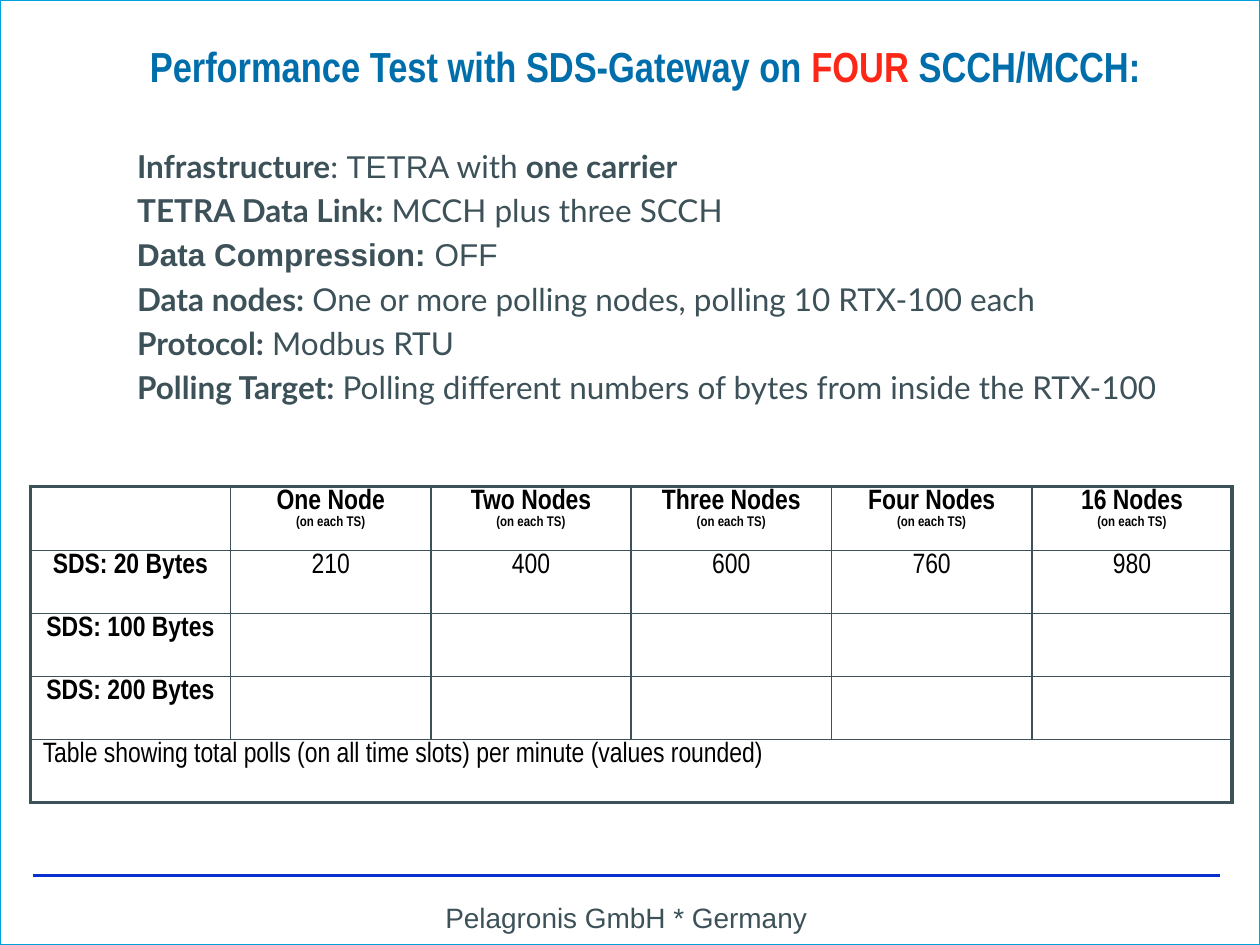
import pptx
import pptx.dml.color
import pptx.enum.shapes
import pptx.enum.text
import pptx.oxml.ns
import pptx.util
from lxml import etree
from pptx.dml.color import RGBColor
from pptx.util import Inches

BLUE = RGBColor(0x00, 0x6E, 0xAA)
RED = RGBColor(0xFD, 0x27, 0x17)
SLATE = RGBColor(0x3D, 0x51, 0x59)
FRAME = RGBColor(0x00, 0xA0, 0xDD)
RULE = RGBColor(0x0A, 0x30, 0xD0)
BLACK = RGBColor(0, 0, 0)
WHITE = RGBColor(255, 255, 255)
CENTER = pptx.enum.text.PP_ALIGN.CENTER
LEFT = pptx.enum.text.PP_ALIGN.LEFT
qn = pptx.oxml.ns.qn


def add_text(para, text, font="Arial", size=18, color=SLATE, bold=False):
    span = para.add_run()
    span.text = text
    span.font.name = font
    span.font.size = pptx.util.Pt(size)
    span.font.color.rgb = color
    span.font.bold = bold


def set_border(cell, side, width):
    line = etree.SubElement(cell._tc.get_or_add_tcPr(), qn("a:ln" + side),
                            w=str(pptx.util.Pt(width)))
    fill = etree.SubElement(line, qn("a:solidFill"))
    etree.SubElement(fill, qn("a:srgbClr"), val=str(SLATE))


deck = pptx.Presentation()
deck.slide_width, deck.slide_height = Inches(10), Inches(7.5)
page = deck.slides.add_slide(deck.slide_layouts[6])

# Page frame
frame = page.shapes.add_shape(pptx.enum.shapes.MSO_SHAPE.RECTANGLE,
                              0, 0, deck.slide_width, deck.slide_height)
frame.shadow.inherit = False
frame.fill.background()
frame.line.color.rgb = FRAME
frame.line.width = pptx.util.Pt(0.75)

# Footer rule
rule = page.shapes.add_connector(pptx.enum.shapes.MSO_CONNECTOR.STRAIGHT,
                                 Inches(0.26), Inches(6.95), Inches(9.68), Inches(6.95))
rule.line.color.rgb = RULE
rule.line.width = pptx.util.Pt(1.5)
etree.SubElement(rule._element.spPr, qn("a:effectLst"))

# Text boxes: footer, title and test conditions
frames = []
for left, top, width, height, inset_x, inset_y in [
    (0.26, 7.15, 9.42, 0.27, 0, 0),
    (1.14, 0.12, 7.96, 0.6, 0, 0),
    (0.99, 1.12, 8.49, 2.4, 0.1, 0.05),
]:
    box = page.shapes.add_textbox(Inches(left), Inches(top), Inches(width), Inches(height))
    text_frame = box.text_frame
    text_frame.word_wrap = True
    text_frame.margin_left = text_frame.margin_right = Inches(inset_x)
    text_frame.margin_top = text_frame.margin_bottom = Inches(inset_y)
    frames.append(text_frame)
footer, title, conditions = frames

footer.paragraphs[0].alignment = CENTER
add_text(footer.paragraphs[0], "Pelagronis GmbH * Germany", size=16)

title.vertical_anchor = pptx.enum.text.MSO_ANCHOR.BOTTOM
title.paragraphs[0].alignment = CENTER
for text, color in [("Performance Test with SDS-Gateway on ", BLUE),
                    ("FOUR", RED), (" SCCH/MCCH:", BLUE)]:
    add_text(title.paragraphs[0], text, font="Arial Narrow", size=24, color=color, bold=True)

# Each line holds spans of text, font and bold
condition_lines = [
    [("Infrastructure", "Lato", True), (": ", "Lato", False), ("TETRA ", "Arial", False),
     ("with ", "Lato", False), ("one carrier", "Lato", True)],
    [("TETRA Data Link:", "Lato", True), (" MCCH plus three SCCH", "Lato", False)],
    [("Data Compression:", "Arial", True), (" OFF", "Arial", False)],
    [("Data nodes:", "Lato", True),
     (" One or more polling nodes, polling 10 RTX-100 each", "Lato", False)],
    [("Protocol:", "Lato", True), (" Modbus RTU", "Lato", False)],
    [("Polling Target:", "Lato", True),
     (" Polling different numbers of bytes from inside the RTX-100", "Lato", False)],
]
for index, spans in enumerate(condition_lines):
    para = conditions.paragraphs[0] if index == 0 else conditions.add_paragraph()
    properties = para._p.get_or_add_pPr()
    properties.set("marL", str(Inches(0.39)))
    properties.set("indent", str(-Inches(0.39)))
    if index:
        para.space_before = pptx.util.Pt(3.6)
    for text, font, bold in spans:
        add_text(para, text, font=font, bold=bold)

# Results table
rows = [
    ["", "One Node", "Two Nodes", "Three Nodes", "Four Nodes", "16 Nodes"],
    ["SDS: 20 Bytes", "210", "400", "600", "760", "980"],
    ["SDS: 100 Bytes"] + [""] * 5,
    ["SDS: 200 Bytes"] + [""] * 5,
    ["Table showing total polls (on all time slots) per minute (values rounded)"] + [""] * 5,
]
last_row, last_column = len(rows) - 1, len(rows[0]) - 1
table = page.shapes.add_table(len(rows), len(rows[0]), Inches(0.24), Inches(3.86),
                              Inches(9.55), Inches(2.51)).table
table.first_row = table.horz_banding = False
for column in table.columns:
    column.width = Inches(1.59)
for index, row in enumerate(table.rows):
    row.height = Inches(0.5 if index else 0.51)
table.cell(last_row, 0).merge(table.cell(last_row, last_column))

for r, values in enumerate(rows):
    caption = r == last_row
    for c, text in enumerate(values):
        cell = table.cell(r, c)
        cell.margin_left = Inches(0.1 if caption else 0)
        cell.margin_right = cell.margin_top = cell.margin_bottom = 0
        outer_edges = {"L": c == 0 or caption, "R": c == last_column or caption,
                       "T": r == 0, "B": caption}
        for side, outer in outer_edges.items():
            set_border(cell, side, 2.25 if outer else 1)
        cell.fill.solid()
        cell.fill.fore_color.rgb = WHITE
        if not text:
            continue
        lines = [(text, 16)]
        if r == 0:
            lines.append(("(on each TS)", 8))
        for index, (line, size) in enumerate(lines):
            para = cell.text_frame.paragraphs[0] if index == 0 else cell.text_frame.add_paragraph()
            para.alignment = LEFT if caption else CENTER
            para.line_spacing = 1.1
            add_text(para, line, font="Arial Narrow", size=size, color=BLACK,
                     bold=r == 0 or (c == 0 and not caption))

deck.save("out.pptx")
